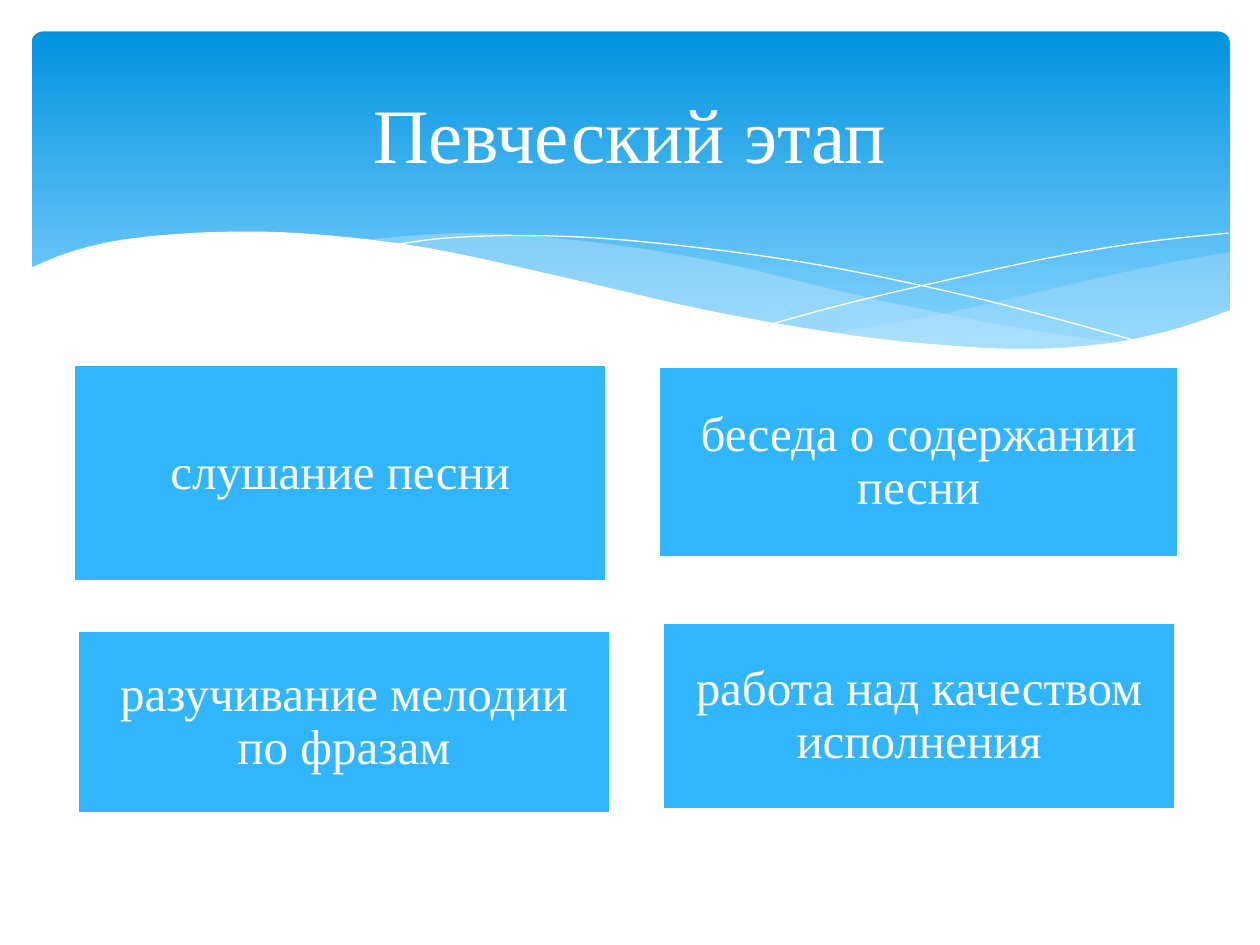
import dataclasses

import pptx
import pptx.dml.color
import pptx.enum.shapes
import pptx.enum.text
import pptx.oxml
import pptx.oxml.ns
import pptx.util

Pt = pptx.util.Pt


@dataclasses.dataclass(frozen=True)
class Theme:
    """Colours, font and type sizes of the slide."""

    white: str = "FFFFFF"
    card: str = "31B6FD"
    banner_top: str = "0293E0"
    banner_bottom: str = "83D3FE"
    swell: str = "C6E7FC"
    font: str = "Times New Roman"
    title_size: float = 44
    card_size: float = 28


THEME = Theme()

RIGHT_SWELL = (
    [(457.9, 172.8), (524.2, 160.6), (601.9, 142.6), (645.1, 133.2), (684.7, 126)],
    [(684.7, 159.8), (650.2, 171.4), (609.8, 179.3), (568.1, 182.2), (518.4, 180),
     (457.9, 172.8)],
)
MIDDLE_SWELL = (
    [(187.9, 119.5), (218.2, 116.6), (255.6, 115.2), (300.2, 118.1), (352.1, 124.6),
     (402.5, 133.9), (434.9, 141.8), (490.3, 154.8), (563, 169.2), (625, 178.6)],
    [(625, 178.6), (599, 181.4), (563, 182.2), (520.6, 180.7), (471.6, 175),
     (414.7, 165.6), (363.6, 154.8), (305.3, 141.8), (257.8, 131), (228.2, 125.3),
     (187.9, 119.5)],
)
FALLING_LINE = [(204.5, 122.4), (236.2, 118.1), (281.5, 116.6), (334.1, 118.8), (401, 126),
                (460.8, 135.4), (529.2, 149.8), (580.3, 162.7), (635, 177.8)]
RISING_LINE = [(423.4, 167), (465.8, 155.5), (520.6, 142.6), (583.9, 128.9),
               (637.2, 120.2), (684, 115.2)]
WHITE_WAVE = [(-1.4, 135.4), (24.5, 125.3), (58.3, 118.1), (109.4, 114.5), (162, 115.9),
              (226.8, 123.8), (303.8, 140.4), (381.6, 158.4), (448.6, 170.6),
              (504.7, 177.8), (564.5, 181.4), (612, 178.6), (651.6, 170.6), (685.4, 159.1)]
WAVE_FLOOR = [(685.4, 218.9), (-1.4, 218.9)]

CARDS = [
    ("слушание песни", (42.5, 208.8, 303.8, 123.1)),
    ("беседа о содержании песни", (376.6, 209.5, 296.6, 108.7)),
    ("разучивание мелодии по фразам", (44.6, 360.7, 303.8, 103.7)),
    ("работа над качеством исполнения", (378.7, 355.7, 293, 106.6)),
]


def rgb(code):
    """Return the colour for a hex code."""
    return pptx.dml.color.RGBColor.from_string(code)


def smooth(knots, steps=6):
    """Return points on a Catmull-Rom curve through the knots."""
    padded = [knots[0], *knots, knots[-1]]
    points = [knots[0]]
    for before, start, end, after in zip(padded, padded[1:], padded[2:], padded[3:]):
        for step in range(1, steps + 1):
            t = step / steps
            points.append(tuple(
                0.5 * (2 * b + (c - a) * t + (2 * a - 5 * b + 4 * c - d) * t ** 2
                       + (3 * b - a - 3 * c + d) * t ** 3)
                for a, b, c, d in zip(before, start, end, after)))
    return points


def add_outline(page, box, points, closed):
    """Draw a freeform whose points are measured from the corner of the box."""
    placed = [(Pt(box[0] + x), Pt(box[1] + y)) for x, y in points]
    builder = page.shapes.build_freeform(*placed[0], scale=1.0)
    builder.add_line_segments(placed[1:], close=closed)
    shape = builder.convert_to_shape()
    shape.shadow.inherit = False
    return shape


def add_area(page, box, points, color, opacity=100):
    """Draw a filled area without an edge."""
    area = add_outline(page, box, points, True)
    area.fill.solid()
    area.fill.fore_color.rgb = rgb(color)
    area.line.fill.background()
    if opacity < 100:
        tone = area._element.spPr.find(".//" + pptx.oxml.ns.qn("a:srgbClr"))
        alpha = pptx.oxml.parse_xml(f"<a:alpha {pptx.oxml.ns.nsdecls('a')}/>")
        alpha.set("val", str(opacity * 1000))
        tone.append(alpha)


def add_curve(page, box, knots):
    """Draw a hairline curve."""
    curve = add_outline(page, box, smooth(knots), False)
    curve.fill.background()
    curve.line.color.rgb = rgb(THEME.white)
    curve.line.width = Pt(0)


def write_text(shape, text, size):
    """Write one centred white paragraph in the middle of a shape."""
    frame = shape.text_frame
    frame.word_wrap = True
    frame.vertical_anchor = pptx.enum.text.MSO_ANCHOR.MIDDLE
    para = frame.paragraphs[0]
    para.alignment = pptx.enum.text.PP_ALIGN.CENTER
    span = para.add_run()
    span.text = text
    span.font.name = THEME.font
    span.font.size = Pt(size)
    span.font.color.rgb = rgb(THEME.white)
    return frame


def add_banner(page, box):
    """Draw the gradient banner with its waves."""
    panel = page.shapes.add_shape(
        pptx.enum.shapes.MSO_SHAPE.ROUNDED_RECTANGLE, *map(Pt, box))
    panel.adjustments[0] = 0.034
    panel.shadow.inherit = False
    panel.line.fill.background()
    panel.fill.gradient()
    panel.fill.gradient_angle = 270
    stops = ((0, THEME.banner_top), (0.9, THEME.banner_bottom))
    for stop, (position, color) in zip(panel.fill.gradient_stops, stops):
        stop.position = position
        stop.color.rgb = rgb(color)
    for (crest, base), opacity in ((RIGHT_SWELL, 29), (MIDDLE_SWELL, 40)):
        add_area(page, box, smooth(crest) + smooth(base), THEME.swell, opacity)
    for knots in (FALLING_LINE, RISING_LINE):
        add_curve(page, box, knots)
    add_area(page, box, smooth(WHITE_WAVE) + WAVE_FLOOR, THEME.white)


def add_title(page, box, text):
    """Write the slide title."""
    write_text(page.shapes.add_textbox(*map(Pt, box)), text, THEME.title_size)


def add_card(page, box, text):
    """Draw one stage card with its label."""
    card = page.shapes.add_shape(pptx.enum.shapes.MSO_SHAPE.RECTANGLE, *map(Pt, box))
    card.shadow.inherit = False
    card.fill.solid()
    card.fill.fore_color.rgb = rgb(THEME.card)
    card.line.color.rgb = rgb(THEME.white)
    card.line.width = Pt(1.25)
    frame = write_text(card, text, THEME.card_size)
    frame.paragraphs[0].line_spacing = 0.9
    for side in ("left", "top", "right", "bottom"):
        setattr(frame, f"margin_{side}", Pt(8.4))


def main():
    """Build the slide and save it."""
    deck = pptx.Presentation()
    deck.slide_width, deck.slide_height = Pt(720), Pt(540)
    page = deck.slides.add_slide(deck.slide_layouts[6])
    add_banner(page, (18, 18, 684.7, 194.4))
    add_title(page, (36, 26.6, 648, 98.6), "Певческий этап")
    for text, box in CARDS:
        add_card(page, box, text)
    deck.save("out.pptx")


if __name__ == "__main__":
    main()
